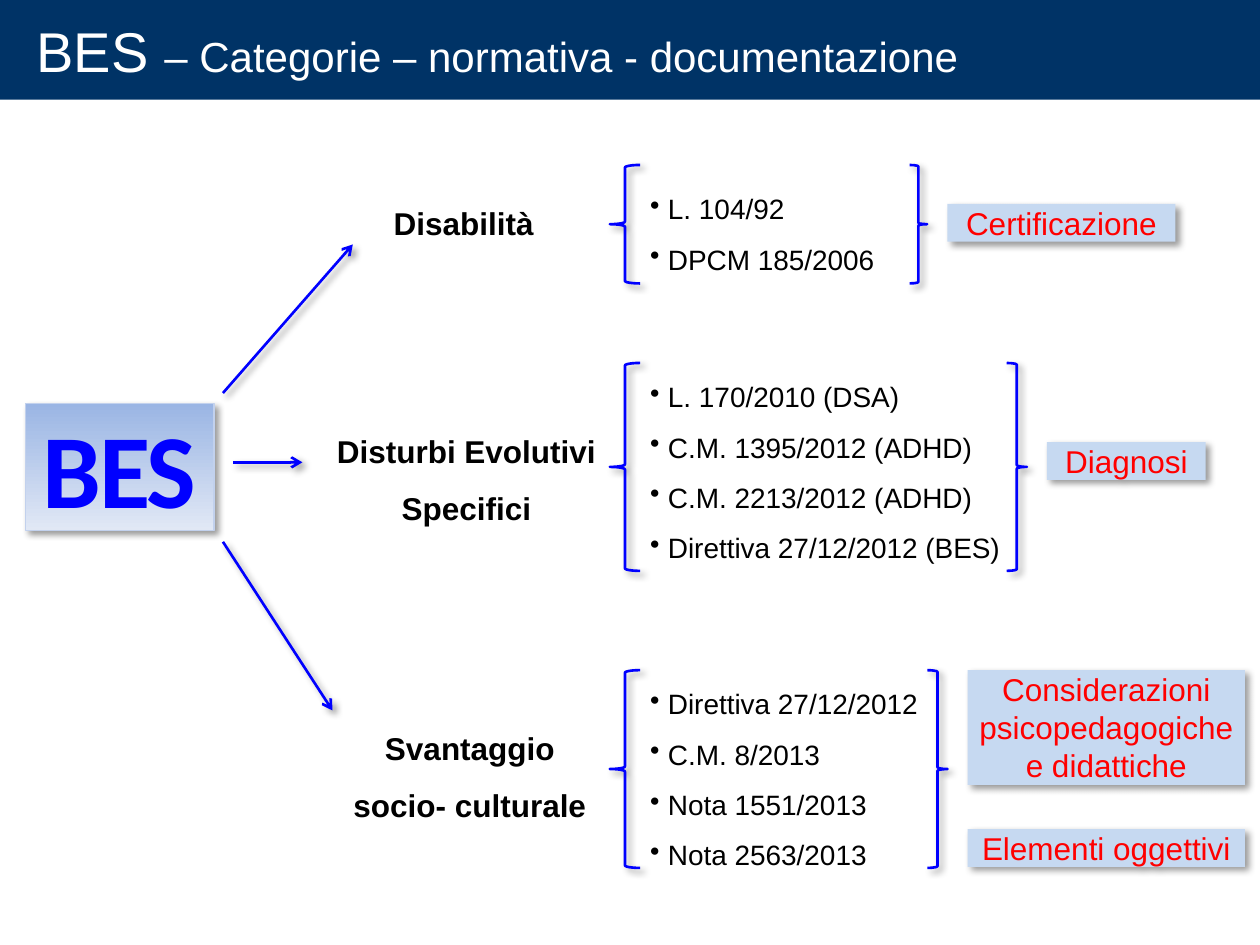
import pptx
import pptx.dml.color
import pptx.enum.shapes
import pptx.enum.text
import pptx.oxml
import pptx.oxml.ns
import pptx.util

Pt = pptx.util.Pt
RGBColor = pptx.dml.color.RGBColor
SHAPE = pptx.enum.shapes.MSO_SHAPE
ALIGN = pptx.enum.text.PP_ALIGN
ANCHOR = pptx.enum.text.MSO_ANCHOR

NAVY = RGBColor(0x00, 0x33, 0x66)
WHITE = RGBColor(0xFF, 0xFF, 0xFF)
BLACK = RGBColor(0x00, 0x00, 0x00)
BLUE = RGBColor(0x00, 0x00, 0xFF)
RED = RGBColor(0xFF, 0x00, 0x00)
PALE_BLUE = RGBColor(0xC6, 0xD9, 0xF1)
GRADIENT_TOP = RGBColor(0x9A, 0xB5, 0xE4)
GRADIENT_BOTTOM = RGBColor(0xE1, 0xE8, 0xF5)
EDGE = RGBColor(0xC2, 0xD1, 0xED)

NAMESPACE = pptx.oxml.ns.nsdecls("a")
SHADOW = (
    f'<a:effectLst {NAMESPACE}><a:outerShdw blurRad="50800" dist="38100" dir="2700000" '
    'algn="tl" rotWithShape="0"><a:srgbClr val="000000"><a:alpha val="40000"/></a:srgbClr>'
    '</a:outerShdw></a:effectLst>'
)
ARROWHEAD = f'<a:tailEnd {NAMESPACE} type="arrow"/>'
BULLET = f'<a:buChar {NAMESPACE} char="•"/>'
BULLET_INDENT = 10.2

# Each row: category and its box, list, brace top and height, right brace left and width
ROWS = [
    ("Disabilità", (222, 116.6, 86, 22), ["L. 104/92", "DPCM 185/2006"],
     100, 94.3, 67.7, 519.8, 10),
    ("Disturbi Evolutivi Specifici", (190, 236.2, 153, 61),
     ["L. 170/2010 (DSA)", "C.M. 1395/2012 (ADHD)", "C.M. 2213/2012 (ADHD)",
      "Direttiva 27/12/2012 (BES)"],
     207.4, 207.4, 118.8, 575.3, 11.5),
    ("Svantaggio socio- culturale", (196, 406, 145, 61),
     ["Direttiva 27/12/2012", "C.M. 8/2013", "Nota 1551/2013", "Nota 2563/2013"],
     383, 383, 113, 530, 11.5),
]
DOCUMENTS = [
    ("Certificazione", (541.4, 116.6, 130.3, 21.6)),
    ("Diagnosi", (598.3, 252.7, 90.7, 21.6)),
    ("Considerazioni psicopedagogiche e didattiche", (553, 383, 158.4, 65.5)),
    ("Elementi oggettivi", (553, 473.8, 158.4, 21.6)),
]
ARROWS = [
    (127.4, 224.6, 201.6, 139.7),
    (133.2, 264.2, 172.8, 264.2),
    (127.4, 309.6, 190, 406),
]


def write(paragraph, text, size=18, color=BLACK, bold=False, font="Arial", spacing=0):
    run = paragraph.add_run()
    run.text = text
    run.font.size = Pt(size)
    run.font.name = font
    run.font.bold = bold
    run.font.color.rgb = color
    if spacing:
        run.font._element.set("spc", str(round(spacing * 100)))


def prepare(frame, anchor=ANCHOR.TOP):
    frame.margin_left = frame.margin_right = frame.margin_top = frame.margin_bottom = 0
    frame.word_wrap = True
    frame.auto_size = pptx.enum.text.MSO_AUTO_SIZE.NONE
    frame.vertical_anchor = anchor
    return frame


class Diagram:
    line_width = 1.5

    def __init__(self, slide):
        self.slide = slide
        self.shapes = slide.shapes

    def add_shadow(self, shape):
        shape._element.spPr.append(pptx.oxml.parse_xml(SHADOW))

    def header(self, box, title_box):
        band = self.shapes.add_shape(SHAPE.RECTANGLE, *map(Pt, box))
        band.shadow.inherit = False
        band.fill.solid()
        band.fill.fore_color.rgb = NAVY
        band.line.fill.background()
        title = self.shapes.title
        title.left, title.top, title.width, title.height = map(Pt, title_box)
        self.shapes._spTree.append(title._element)  # bring in front of the band
        paragraph = prepare(title.text_frame, ANCHOR.MIDDLE).paragraphs[0]
        paragraph.alignment = ALIGN.LEFT
        write(paragraph, "BES ", size=32, color=WHITE)
        write(paragraph, "– Categorie – normativa - documentazione", size=24, color=WHITE)

    def category(self, text, box):
        frame = prepare(self.shapes.add_textbox(*map(Pt, box)).text_frame)
        paragraph = frame.paragraphs[0]
        paragraph.alignment = ALIGN.CENTER
        if box[3] > 30:
            paragraph.line_spacing = 1.5
        write(paragraph, text, bold=True)

    def bullets(self, items, box):
        frame = prepare(self.shapes.add_textbox(*map(Pt, box)).text_frame)
        for index, item in enumerate(items):
            paragraph = frame.add_paragraph() if index else frame.paragraphs[0]
            paragraph.line_spacing = 1.5
            properties = paragraph._element.get_or_add_pPr()
            properties.set("marL", str(Pt(BULLET_INDENT)))
            properties.set("indent", str(-Pt(BULLET_INDENT)))
            properties.append(pptx.oxml.parse_xml(BULLET))
            write(paragraph, item, size=16)

    def brace(self, kind, box):
        brace = self.shapes.add_shape(kind, *map(Pt, box))
        brace.fill.background()
        brace.line.color.rgb = BLUE
        brace.line.width = Pt(self.line_width)
        self.add_shadow(brace)

    def arrow(self, ends):
        arrow = self.shapes.add_connector(
            pptx.enum.shapes.MSO_CONNECTOR.STRAIGHT, *map(Pt, ends))
        arrow.line.color.rgb = BLUE
        arrow.line.width = Pt(self.line_width)
        arrow.line._get_or_add_ln().append(pptx.oxml.parse_xml(ARROWHEAD))
        self.add_shadow(arrow)

    def panel(self, text, box, gradient=False, **text_format):
        panel = self.shapes.add_shape(SHAPE.RECTANGLE, *map(Pt, box))
        if gradient:
            panel.fill.gradient()
            panel.fill.gradient_angle = 270
            for stop, color in zip(panel.fill.gradient_stops, (GRADIENT_TOP, GRADIENT_BOTTOM)):
                stop.color.rgb = color
            panel.line.color.rgb = EDGE
            panel.line.width = Pt(0.75)
        else:
            panel.fill.solid()
            panel.fill.fore_color.rgb = PALE_BLUE
            panel.line.fill.background()
        self.add_shadow(panel)
        paragraph = prepare(panel.text_frame).paragraphs[0]
        paragraph.alignment = ALIGN.CENTER
        write(paragraph, text, **text_format)


def main():
    presentation = pptx.Presentation()
    presentation.slide_width, presentation.slide_height = Pt(720), Pt(540)
    diagram = Diagram(presentation.slides.add_slide(presentation.slide_layouts[5]))

    # Title band
    diagram.header((0, 0, 720, 57), (20.9, 9.4, 680, 39))

    # Categories with their regulations between braces
    for category, box, rules, list_top, top, height, right, width in ROWS:
        diagram.category(category, box)
        diagram.bullets(rules, (371.5, list_top, right - 371.5, height))
        diagram.brace(SHAPE.LEFT_BRACE, (348.5, top, 17.3, height))
        diagram.brace(SHAPE.RIGHT_BRACE, (right, top, width, height))

    # Starting point and arrows to the categories
    diagram.panel("BES", (14.4, 230.4, 108, 72.7), gradient=True,
                  size=60, color=BLUE, bold=True, font="Calibri", spacing=-1.4)
    for ends in ARROWS:
        diagram.arrow(ends)

    # Required documents
    for text, box in DOCUMENTS:
        diagram.panel(text, box, color=RED)

    presentation.save("out.pptx")


if __name__ == "__main__":
    main()
